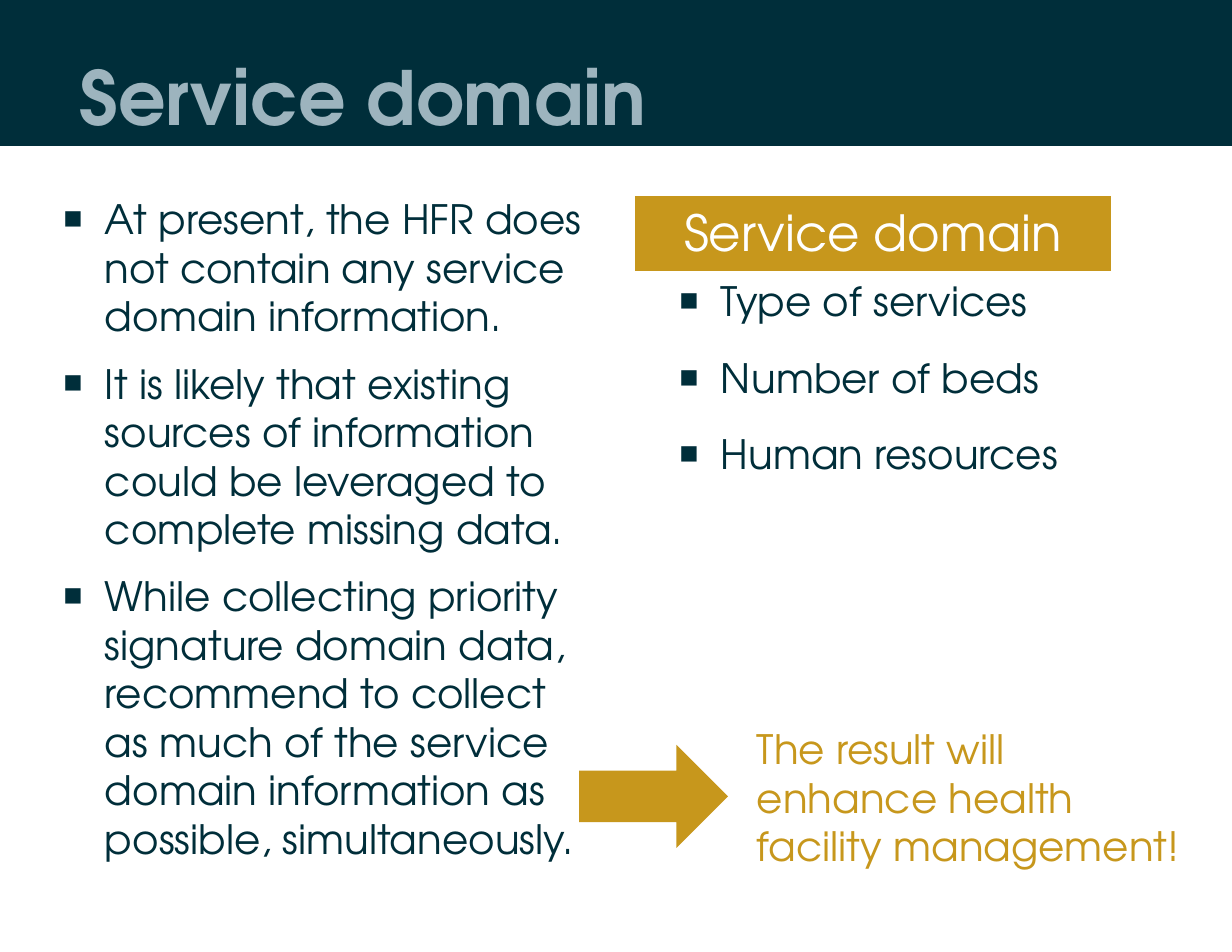
from dataclasses import dataclass

from lxml import etree
from pptx import Presentation
from pptx import util as u
from pptx.dml.color import RGBColor
from pptx.enum import shapes, text
from pptx.oxml.ns import qn


@dataclass(frozen=True)
class Theme:
    font: str = "TeX Gyre Adventor"
    navy: str = "002E3A"
    mist: str = "9DB4BE"
    gold: str = "C7971C"
    white: str = "FFFFFF"
    title: int = 48
    heading: int = 32
    body: int = 26


def px(n):
    return u.Emu(round(n * 914400 / 112))


class Deck:
    def __init__(self, prs, theme):
        self.theme = theme
        self.s = prs.slides.add_slide(prs.slide_layouts[5])

    def place(self, sp, box):
        for name, n in zip(("left", "top", "width", "height"), box):
            setattr(sp, name, px(n))

    def fill_text(self, sp, lines, size, color, bold=False, align=text.PP_ALIGN.LEFT,
                  bullet=None, **spacing):
        """Fill a shape with paragraphs; spacing holds space_before / space_after in points."""
        tf = sp.text_frame
        tf.word_wrap = True
        tf.auto_size = text.MSO_AUTO_SIZE.NONE
        tf.vertical_anchor = text.MSO_ANCHOR.TOP
        for i, line in enumerate(lines):
            p = tf.add_paragraph() if i else tf.paragraphs[0]
            p.alignment = align
            for name, points in spacing.items():
                setattr(p, name, u.Pt(points))
            r = p.add_run()
            r.text = line
            for name, value in {"name": self.theme.font, "size": u.Pt(size), "bold": bold}.items():
                setattr(r.font, name, value)
            r.font.color.rgb = RGBColor.from_string(color)
            if bullet:
                self.bullet(p, bullet)

    def bullet(self, p, char, indent=57, hang=42):
        pPr = p._p.get_or_add_pPr()
        pPr.set("marL", str(px(indent)))
        pPr.set("indent", str(-px(hang)))
        etree.SubElement(pPr, qn("a:buFont")).set("typeface", self.theme.font)
        etree.SubElement(pPr, qn("a:buChar")).set("char", char)

    def title(self, line, box):
        sp = self.s.shapes.title
        self.place(sp, box)
        self.fill_text(sp, [line], self.theme.title, self.theme.mist, bold=True)

    def textbox(self, lines, box, color, **style):
        sp = self.s.shapes.add_textbox(*map(px, box))
        self.fill_text(sp, lines, self.theme.body, color, **style)

    def shape(self, kind, box, color):
        sp = self.s.shapes.add_shape(kind, *map(px, box))
        sp.shadow.inherit = False
        sp.fill.solid()
        sp.fill.fore_color.rgb = RGBColor.from_string(color)
        sp.line.fill.background()
        return sp

    def band(self, box, color):
        """Draw a rectangle behind everything else."""
        sp = self.shape(shapes.MSO_SHAPE.RECTANGLE, box, color)
        self.s.shapes._spTree.insert(2, sp._element)

    def heading(self, line, box):
        sp = self.shape(shapes.MSO_SHAPE.FLOWCHART_PROCESS, box, self.theme.gold)
        self.fill_text(sp, [line], self.theme.heading, self.theme.white,
                       align=text.PP_ALIGN.CENTER, space_before=12)


def main():
    prs = Presentation()
    prs.slide_width, prs.slide_height = px(1232), px(952)
    theme = Theme()
    deck = Deck(prs, theme)

    deck.band((0, 0, 1232, 146), theme.navy)
    deck.title("Service domain", (68, 45, 1068, 140))
    deck.textbox([
        "At present, the HFR does not contain any service domain information.",
        "It is likely that existing sources of information could be leveraged "
        "to complete missing data.",
        "While collecting priority signature domain data, recommend to collect as much "
        "of the service domain information as possible, simultaneously.",
    ], (37, 189, 560, 763), theme.navy, bullet="▪", space_after=12)

    deck.textbox(["Type of services", "Number of beds", "Human resources"],
                 (653, 271, 457, 233), theme.navy, bullet="▪", space_before=18)
    deck.heading("Service domain", (635, 196, 476, 75))

    deck.shape(shapes.MSO_SHAPE.RIGHT_ARROW, (579, 745, 149, 103), theme.gold)
    deck.textbox(["The result will enhance health facility management!"],
                 (746, 719, 448, 187), theme.gold)
    prs.save("out.pptx")


if __name__ == "__main__":
    main()
